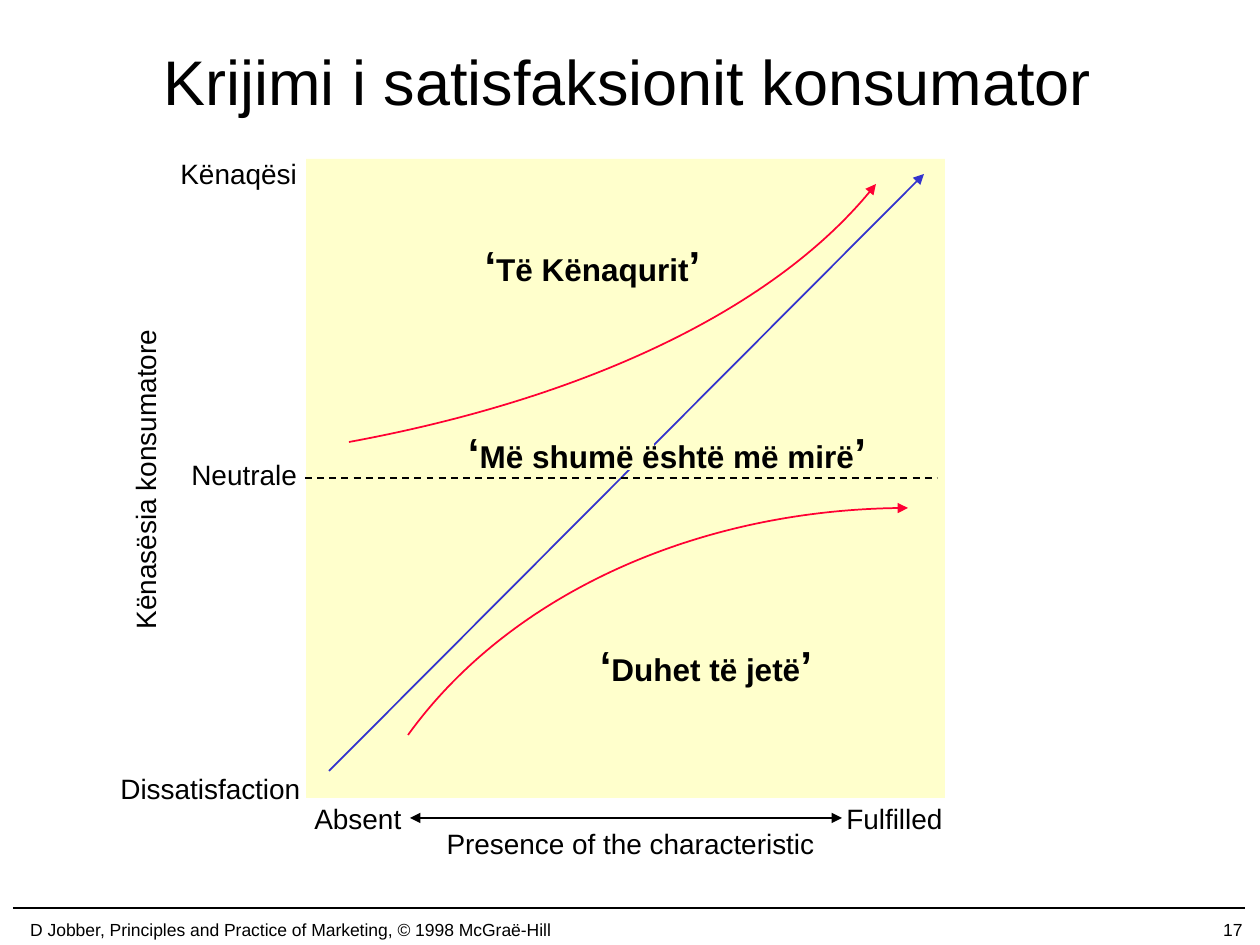
"""Build a slide that charts customer satisfaction against the presence of a characteristic."""
from lxml.etree import SubElement
from pptx import Presentation
from pptx.dml.color import RGBColor
from pptx.enum.dml import MSO_LINE
from pptx.enum.shapes import MSO_CONNECTOR, MSO_SHAPE
from pptx.enum.text import MSO_ANCHOR, PP_ALIGN
from pptx.oxml.ns import qn
from pptx.util import Emu, Pt

SCALE = 914400 / 126
FONT = "Arial"
COLORS = {"ink": "000000", "panel": "FFFFCC", "linear": "3333CC", "curve": "FF0033"}


def px(length):
    """Turn px into EMU."""
    return Emu(round(length * SCALE))


def rgb(name):
    """Look up a named colour."""
    return RGBColor.from_string(COLORS[name])


class SlideBuilder:
    """Hold the style and the current slide, and draw each kind of element."""

    def __init__(self, presentation):
        """Add a blank slide."""
        self.slide = presentation.slides.add_slide(presentation.slide_layouts[6])
        self.shapes = self.slide.shapes

    def style_line(self, line, color, arrows=()):
        """Set line colour, width and the arrowheads, named headEnd or tailEnd."""
        line.color.rgb = rgb(color)
        line.width = Pt(1)
        for end in arrows:
            SubElement(line._get_or_add_ln(), qn(f"a:{end}"), type="triangle")

    def rectangle(self, left, top, width, height, color):
        """Draw a filled rectangle without outline."""
        shape = self.shapes.add_shape(
            MSO_SHAPE.RECTANGLE, px(left), px(top), px(width), px(height))
        shape.shadow.inherit = False
        shape.fill.solid()
        shape.fill.fore_color.rgb = rgb(color)
        shape.line.fill.background()

    def line(self, start, end, color="ink", dash=None, arrows=()):
        """Draw a straight line."""
        connector = self.shapes.add_connector(
            MSO_CONNECTOR.STRAIGHT, *map(px, start + end))
        if dash:
            connector.line.dash_style = dash
        self.style_line(connector.line, color, arrows)
        SubElement(connector._element.spPr, qn("a:effectLst"))

    def curve(self, points, color, arrows):
        """Draw one cubic Bézier curve through a start, two controls and an end."""
        start, *others = [(px(x), px(y)) for x, y in points]
        builder = self.shapes.build_freeform(*start)
        builder.add_line_segments(others, close=False)
        shape = builder.convert_to_shape()
        shape.shadow.inherit = False
        shape.fill.background()
        self.style_line(shape.line, color, arrows)
        outline = shape._element.find(".//" + qn("a:path"))
        bezier = SubElement(outline, qn("a:cubicBezTo"))
        for segment in outline.findall(qn("a:lnTo")):
            bezier.append(segment[0])
            outline.remove(segment)

    def text(self, box, text, size=16, align=PP_ALIGN.LEFT, anchor=MSO_ANCHOR.TOP, rotation=0):
        """Write one paragraph and return it."""
        shape = self.shapes.add_textbox(*map(px, box))
        shape.rotation = rotation
        frame = shape.text_frame
        frame.word_wrap = True
        frame.vertical_anchor = anchor
        paragraph = frame.paragraphs[0]
        paragraph.text = text
        paragraph.alignment = align
        paragraph.font.name = FONT
        paragraph.font.size = Pt(size)
        paragraph.font.color.rgb = rgb("ink")
        return paragraph

    def quote(self, box, text):
        """Write a bold phrase between larger quotation marks."""
        paragraph = self.text(box, "", 18, PP_ALIGN.CENTER)
        paragraph.font.bold = True
        for part, size in (("‘", 24), (text, 18), ("’", 24)):
            run = paragraph.add_run()
            run.text = part
            run.font.size = Pt(size)


def main():
    """Build and save the slide."""
    presentation = Presentation()
    presentation.slide_width, presentation.slide_height = px(1260), px(945)
    builder = SlideBuilder(presentation)
    middle, center = MSO_ANCHOR.MIDDLE, PP_ALIGN.CENTER

    builder.line((13, 908), (1245, 908))
    builder.text((993, 913, 262, 32), "17", 10, PP_ALIGN.RIGHT, middle)
    builder.text((0, 913, 581, 32),
                 "D Jobber, Principles and Practice of Marketing, © 1998 McGraë-Hill",
                 10, center, middle)
    builder.rectangle(306, 159, 639, 639, "panel")
    builder.text((92, 1, 1071, 158), "Krijimi i satisfaksionit konsumator", 36, center, middle)

    builder.line((329, 771), (924, 174), "linear", arrows=["tailEnd"])
    builder.line((305, 478), (937, 478), dash=MSO_LINE.DASH)
    builder.curve([(876, 184), (781, 305), (588, 398), (349, 442)], "curve", ["headEnd"])
    builder.curve([(408, 735), (509, 595), (701, 508), (908, 508)], "curve", ["tailEnd"])

    for box, label in (
        ((168, 150, 160, 47), "Kënaqësi"),
        ((179, 451, 135, 48), "Neutrale"),
        ((108, 765, 232, 48), "Dissatisfaction"),
        ((302, 795, 116, 48), "Absent"),
        ((834, 795, 154, 48), "Fulfilled"),
    ):
        builder.text(box, label)
    builder.line((410, 818), (842, 818), arrows=["headEnd", "tailEnd"])
    builder.text((418, 820, 425, 48), "Presence of the characteristic", align=center)
    builder.text((-67, 457, 423, 45), "Kënasësia konsumatore", align=center, rotation=270)

    builder.quote((460, 233, 265, 63), "Të Kënaqurit")
    builder.rectangle(622, 428, 32, 42, "panel")
    builder.quote((420, 420, 494, 63), "Më shumë është më mirë")
    builder.quote((525, 633, 362, 64), "Duhet të jetë")
    presentation.save("out.pptx")


if __name__ == "__main__":
    main()
